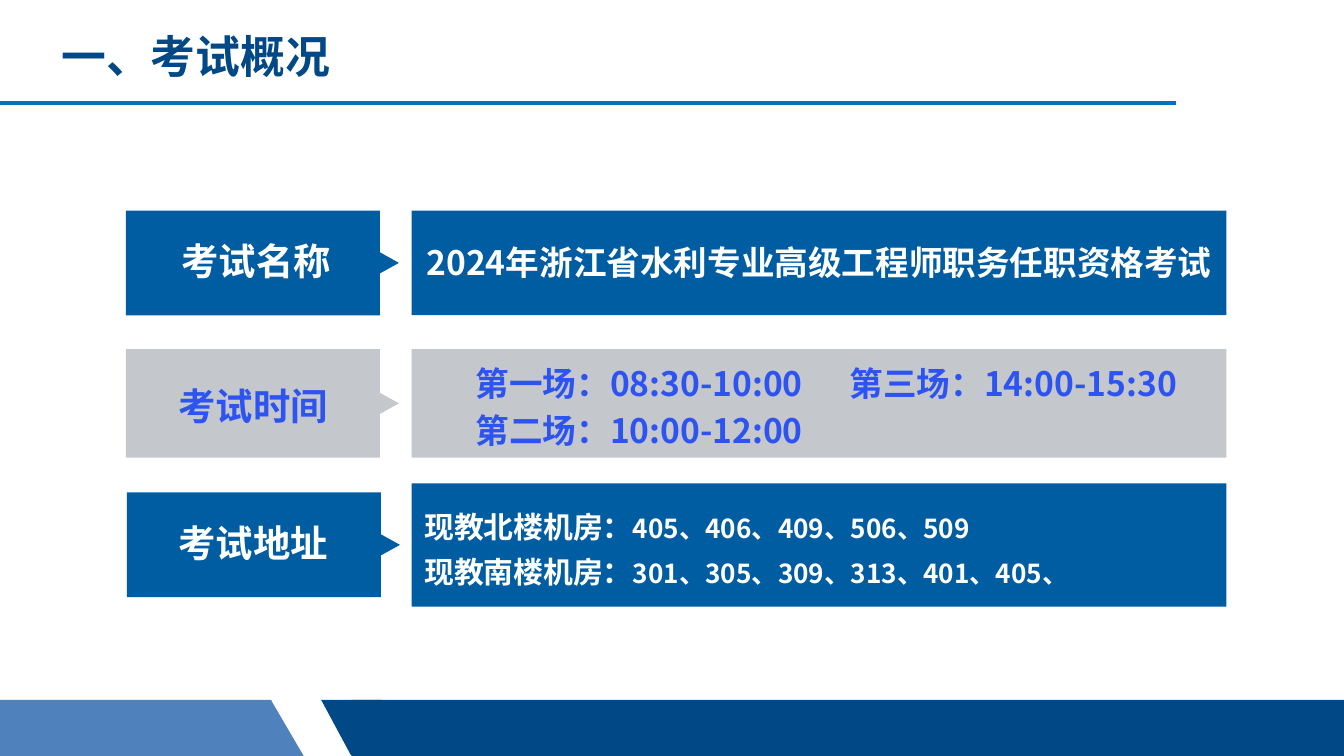
import lxml.etree
import pptx
import pptx.dml.color
import pptx.enum.shapes
import pptx.enum.text
import pptx.oxml.ns
import pptx.util

Cm = pptx.util.Cm
Pt = pptx.util.Pt
qn = pptx.oxml.ns.qn
SHAPES = pptx.enum.shapes.MSO_SHAPE
ALIGN = pptx.enum.text.PP_ALIGN

NAVY = pptx.dml.color.RGBColor(0x01, 0x48, 0x86)
STEEL = pptx.dml.color.RGBColor(0x4F, 0x81, 0xBD)
RULE_BLUE = pptx.dml.color.RGBColor(0x00, 0x70, 0xC0)
PANEL_BLUE = pptx.dml.color.RGBColor(0x00, 0x5D, 0xA2)
PANEL_GRAY = pptx.dml.color.RGBColor(0xC4, 0xC7, 0xCB)
TEXT_BLUE = pptx.dml.color.RGBColor(0x2D, 0x54, 0xF0)
WHITE = pptx.dml.color.RGBColor(0xFF, 0xFF, 0xFF)
FONT = "Noto Sans CJK SC"


def paint(shape, color):
    shape.shadow.inherit = False
    shape.fill.solid()
    shape.fill.fore_color.rgb = color
    shape.line.fill.background()


def add_text(box, lines, color, wrap=True, **paragraph_format):
    frame = slide.shapes.add_textbox(*map(Cm, box)).text_frame
    frame.word_wrap = wrap
    for index, runs in enumerate(lines):
        paragraph = frame.add_paragraph() if index else frame.paragraphs[0]
        for name, value in paragraph_format.items():
            setattr(paragraph, name, value)
        for text, size in runs:
            run = paragraph.add_run()
            run.text = text
            run.font.color.rgb = color
            for name, value in {"name": FONT, "size": Pt(size), "bold": True}.items():
                setattr(run.font, name, value)
            east_asian = lxml.etree.SubElement(run.font._element, qn("a:ea"))
            east_asian.set("typeface", FONT)
    return frame


presentation = pptx.Presentation()
presentation.slide_width = Cm(25.4)
presentation.slide_height = Cm(14.29)
slide = presentation.slides.add_slide(presentation.slide_layouts[6])

footer_top, footer_height = 13.23, 1.06
for kind, left, width, rotation, color in [
    (SHAPES.RECTANGLE, 0, 5.13, 0, STEEL),
    (SHAPES.RECTANGLE, 6.65, 18.75, 0, NAVY),
    (SHAPES.ISOSCELES_TRIANGLE, 4.5, 1.24, 0, STEEL),
    (SHAPES.ISOSCELES_TRIANGLE, 6.07, 1.14, 180, NAVY),
]:
    shape = slide.shapes.add_shape(
        kind, Cm(left), Cm(footer_top), Cm(width), Cm(footer_height))
    shape.rotation = rotation
    paint(shape, color)

add_text((0.91, 0.41, 5.64, 1.3), [[("一、考试概况", 24)]], NAVY, wrap=False)
rule = slide.shapes.add_connector(
    pptx.enum.shapes.MSO_CONNECTOR.STRAIGHT, Cm(0), Cm(1.95), Cm(22.22), Cm(1.95))
rule.line.color.rgb = RULE_BLUE
rule.line.width = Pt(2.25)
lxml.etree.SubElement(rule._element.spPr, qn("a:effectLst"))

panel_left, panel_width = 7.78, 15.4
tag_width, tip_width, tip_half = 4.8, 0.36, 0.2
for label, label_left, label_top, tag_left, tag_top, tag_height, top, height, color, text_color in [
    ("考试名称", 3.18, 4.37, 2.38, 3.98, 1.98, 3.98, 1.98, PANEL_BLUE, WHITE),
    ("考试时间", 3.12, 7.11, 2.38, 6.6, 2.05, 6.6, 2.05, PANEL_GRAY, TEXT_BLUE),
    ("考试地址", 3.12, 9.7, 2.4, 9.31, 1.98, 9.14, 2.33, PANEL_BLUE, WHITE),
]:
    panel = slide.shapes.add_shape(
        SHAPES.RECTANGLE, Cm(panel_left), Cm(top), Cm(panel_width), Cm(height))
    paint(panel, color)
    right, bottom, middle = tag_left + tag_width, tag_top + tag_height, tag_top + tag_height / 2
    outline = slide.shapes.build_freeform(Cm(tag_left), Cm(tag_top))
    outline.add_line_segments([(Cm(x), Cm(y)) for x, y in [
        (right, tag_top), (right, middle - tip_half), (right + tip_width, middle),
        (right, middle + tip_half), (right, bottom), (tag_left, bottom),
    ]])
    paint(outline.convert_to_shape(), color)
    add_text((label_left, label_top, 3.35, 1.12), [[(label, 20)]], text_color, wrap=False)

add_text((7.54, 4.45, 15.88, 1.02),
         [[("2024年浙江省水利专业高级工程师职务任职资格考试", 18)]],
         WHITE, alignment=ALIGN.CENTER)

schedule = add_text((8.74, 6.62, 14.88, 2.03), [
    [("第一场：08:30-10:00\t第三场：14:00-15:30", 18)],
    [("第二场：10:00-12:00", 18)],
], TEXT_BLUE, line_spacing=Pt(25))
properties = schedule.paragraphs[0]._p.get_or_add_pPr()
tabs = lxml.etree.SubElement(properties, qn("a:tabLst"))
lxml.etree.SubElement(tabs, qn("a:tab"), pos=str(int(Cm(7.07))), algn="l")

add_text((7.77, 9.32, 15.4, 1.88), [
    [("现教北楼机房：", 16), ("405、406、409、506、509", 14)],
    [("现教南楼机房：", 16), ("301、305、309、313、401、405、", 14)],
], WHITE, line_spacing=Pt(24))

presentation.save("out.pptx")
